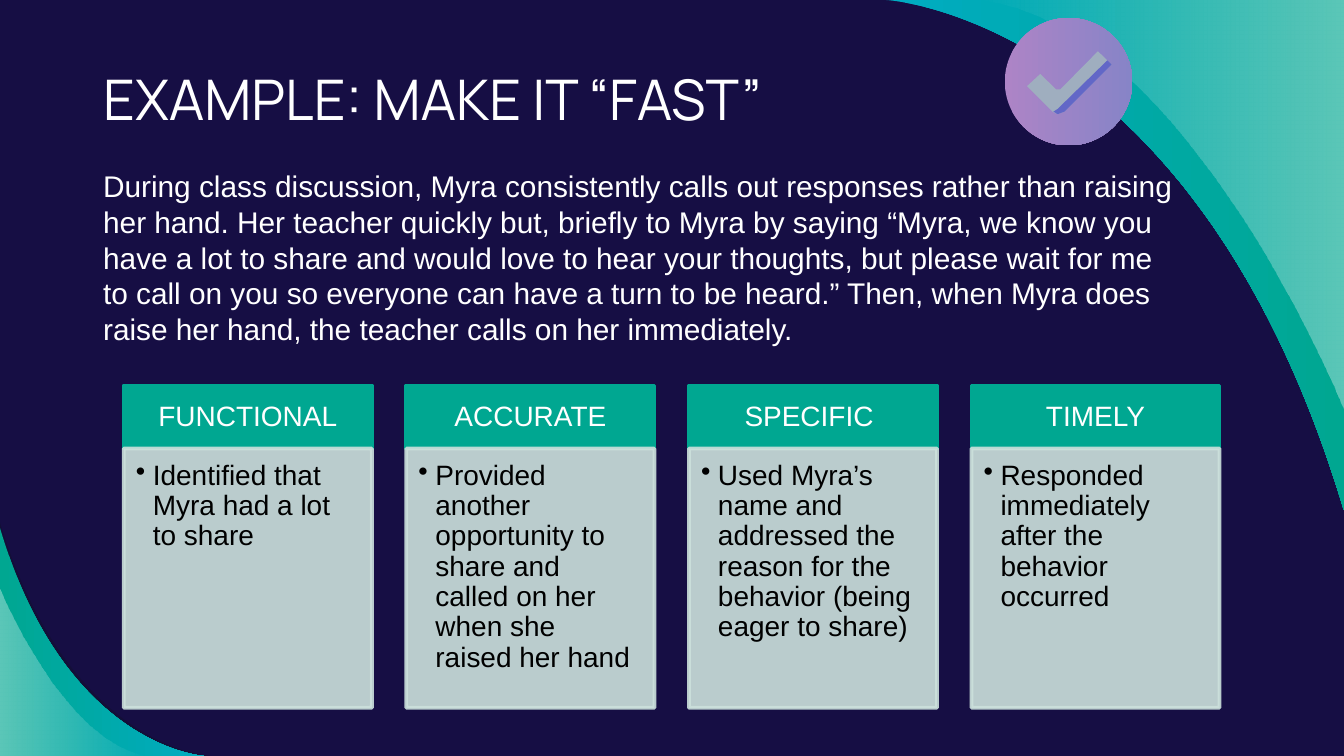
from dataclasses import dataclass

from lxml.etree import SubElement
from pptx import Presentation
from pptx.dml.color import RGBColor
from pptx.enum.shapes import MSO_SHAPE
from pptx.enum.text import MSO_ANCHOR, PP_ALIGN
from pptx.oxml.ns import qn
from pptx.util import Cm, Pt


@dataclass(frozen=True)
class Theme:
    navy: str = "160E44"
    shade: str = "12102F"
    cyan: str = "00ACC2"
    green: str = "00A791"
    mist: str = "CCE1DC"
    white: str = "FFFFFF"
    black: str = "000000"
    pink: str = "AD84C6"
    violet: str = "8784C7"
    tick: str = "9FAEBF"
    tick_shade: str = "6267C7"
    heading_font: str = "Manrope"
    body_font: str = "Arial"
    title_size: int = 30
    story_size: int = 16
    card_size: int = 15


theme = Theme()


def paint(shape, *stops, line=None):
    """Fill with one (colour, opacity) stop, or a left-to-right pair of them."""
    shape.shadow.inherit = False
    if len(stops) == 1:
        shape.fill.solid()
        colors = [shape.fill.fore_color]
    else:
        shape.fill.gradient()
        shape.fill.gradient_angle = 0
        colors = [stop.color for stop in shape.fill.gradient_stops]
    if line:
        shape.line.width = Pt(2)
        shape.line.fill.solid()
        colors.append(shape.line.color)
        stops += (line,)
    else:
        shape.line.fill.background()
    for color, (value, opacity) in zip(colors, stops):
        color.rgb = RGBColor.from_string(value)
        if opacity < 100:
            for node in shape._element.spPr.iter(qn("a:srgbClr")):
                if node.get("val") == value and len(node) == 0:
                    SubElement(node, qn("a:alpha"), val=str(opacity * 1000))


def write(box, text, *, size, color, font=theme.body_font, align=PP_ALIGN.LEFT,
          anchor=MSO_ANCHOR.TOP, margins=(0.25, 0.25, 0.25, 0.25),
          spacing=None, bullet_indent=None):
    frame = box.text_frame
    frame.word_wrap = True
    frame.vertical_anchor = anchor
    (frame.margin_left, frame.margin_top,
     frame.margin_right, frame.margin_bottom) = map(Cm, margins)
    para = frame.paragraphs[0]
    para.alignment = align
    para.line_spacing = spacing
    if bullet_indent:
        properties = para._p.get_or_add_pPr()
        properties.set("marL", str(Cm(bullet_indent)))
        properties.set("indent", str(-Cm(bullet_indent)))
        bullet_color = SubElement(properties, qn("a:buClr"))
        SubElement(bullet_color, qn("a:srgbClr"), val=color)
        SubElement(properties, qn("a:buChar"), char="•")
    span = para.add_run()
    span.text = text
    span.font.name = font
    span.font.size = Pt(size)
    span.font.color.rgb = RGBColor.from_string(color)


deck = Presentation()
deck.slide_width, deck.slide_height = Cm(25.4), Cm(14.29)
page = deck.slides.add_slide(deck.slide_layouts[6])
page.background.fill.solid()
page.background.fill.fore_color.rgb = RGBColor.from_string(theme.navy)
shapes = page.shapes

# Curved corners: cubic curve control points, closing corner, fill stops
bottom_left, top_right = (0, 14.29), (25.4, 0)
clear, veil = (theme.white, 0), (theme.white, 36)
cyan, green = (theme.cyan, 100), (theme.green, 100)
corners = [
    ([(0, 9.88), (1.3, 14.15), (3.96, 14.29), (3.96, 14.29)], bottom_left, [(theme.shade, 54)]),
    ([(0, 9.98), (1.24, 14.15), (3.86, 14.29), (3.86, 14.29)], bottom_left, [green, cyan]),
    ([(0, 11.1), (0, 11.1), (1.19, 14.1), (2.82, 14.29)], bottom_left, [veil, clear]),
    ([(16.74, 0), (16.74, 0), (22.61, 0.3), (25.4, 9.65)], top_right, [cyan, green]),
    ([(18.52, 0), (22.48, 0.48), (25.4, 7.77), (25.4, 7.77)], top_right, [clear, veil]),
]
for controls, corner, stops in corners:
    start, *others = [(Cm(x), Cm(y)) for x, y in controls + [corner]]
    builder = shapes.build_freeform(*start)
    builder.add_line_segments(others, close=True)
    region = builder.convert_to_shape()
    # Turn the first three straight segments into one cubic curve
    outline = next(region._element.iter(qn("a:path")))
    segments = outline.findall(qn("a:lnTo"))[:3]
    curve = SubElement(outline, qn("a:cubicBezTo"))
    segments[0].addprevious(curve)
    for segment in segments:
        curve.append(segment[0])
        outline.remove(segment)
    paint(region, *stops)

# Title
title = shapes.add_textbox(Cm(1.7), Cm(0.97), Cm(19.53), Cm(1.75))
write(title, "EXAMPLE: MAKE IT “FAST”", size=theme.title_size, color=theme.white,
      font=theme.heading_font)

# Cards: a header above a bulleted body
cards = [
    ("FUNCTIONAL", "Identified that Myra had a lot to share"),
    ("ACCURATE", "Provided another opportunity to share and called on her when she raised her hand"),
    ("SPECIFIC ", "Used Myra’s name and addressed the reason for the behavior (being eager to share)"),
    ("TIMELY", "Responded immediately after the behavior occurred"),
]
card_left, card_pitch, card_width = 2.34, 5.34, 4.69
for index, (heading, detail) in enumerate(cards):
    left = Cm(card_left + index * card_pitch)
    header = shapes.add_shape(MSO_SHAPE.RECTANGLE, left, Cm(7.29), Cm(card_width), Cm(1.19))
    paint(header, green, line=green)
    write(header, heading, size=theme.card_size, color=theme.white, align=PP_ALIGN.CENTER,
          anchor=MSO_ANCHOR.MIDDLE, margins=(0.3, 0.17, 0.3, 0.17), spacing=0.9)
    body = shapes.add_shape(MSO_SHAPE.RECTANGLE, left, Cm(8.48), Cm(card_width), Cm(4.9))
    paint(body, (theme.mist, 90), line=(theme.mist, 90))
    write(body, detail, size=theme.card_size, color=theme.black,
          margins=(0.23, 0.24, 0.3, 0.34), spacing=0.9, bullet_indent=0.32)

# Classroom story
story = shapes.add_textbox(Cm(1.7), Cm(3.04), Cm(20.73), Cm(3.68))
write(story, "During class discussion, Myra consistently calls out responses rather than raising "
      "her hand. Her teacher quickly but, briefly to Myra by saying “Myra, we know you have a lot "
      "to share and would love to hear your thoughts, but please wait for me to call on you so "
      "everyone can have a turn to be heard.” Then, when Myra does raise her hand, the teacher "
      "calls on her immediately.",
      size=theme.story_size, color=theme.white, margins=(0.25, 0.13, 0.25, 0.13))

# Check mark badge
badge = shapes.add_shape(MSO_SHAPE.OVAL, Cm(18.99), Cm(0.34), Cm(2.41), Cm(2.41))
paint(badge, (theme.pink, 100), (theme.violet, 100))
lower_edge = [(19.99, 2.16), (20.12, 2.11), (21.01, 1.22)]
tick_parts = [
    (theme.tick, [(20.75, 0.97), (20.04, 1.69), (19.96, 1.69), (19.66, 1.4),
                  (19.41, 1.63), (19.89, 2.11)]),
    (theme.tick_shade, [(20.93, 1.14), (19.99, 2.06), (19.91, 2.11)]),
]
for color, points in tick_parts:
    start, *others = [(Cm(x), Cm(y)) for x, y in points + lower_edge]
    builder = shapes.build_freeform(*start)
    builder.add_line_segments(others, close=True)
    paint(builder.convert_to_shape(), (color, 100))

deck.save("out.pptx")
